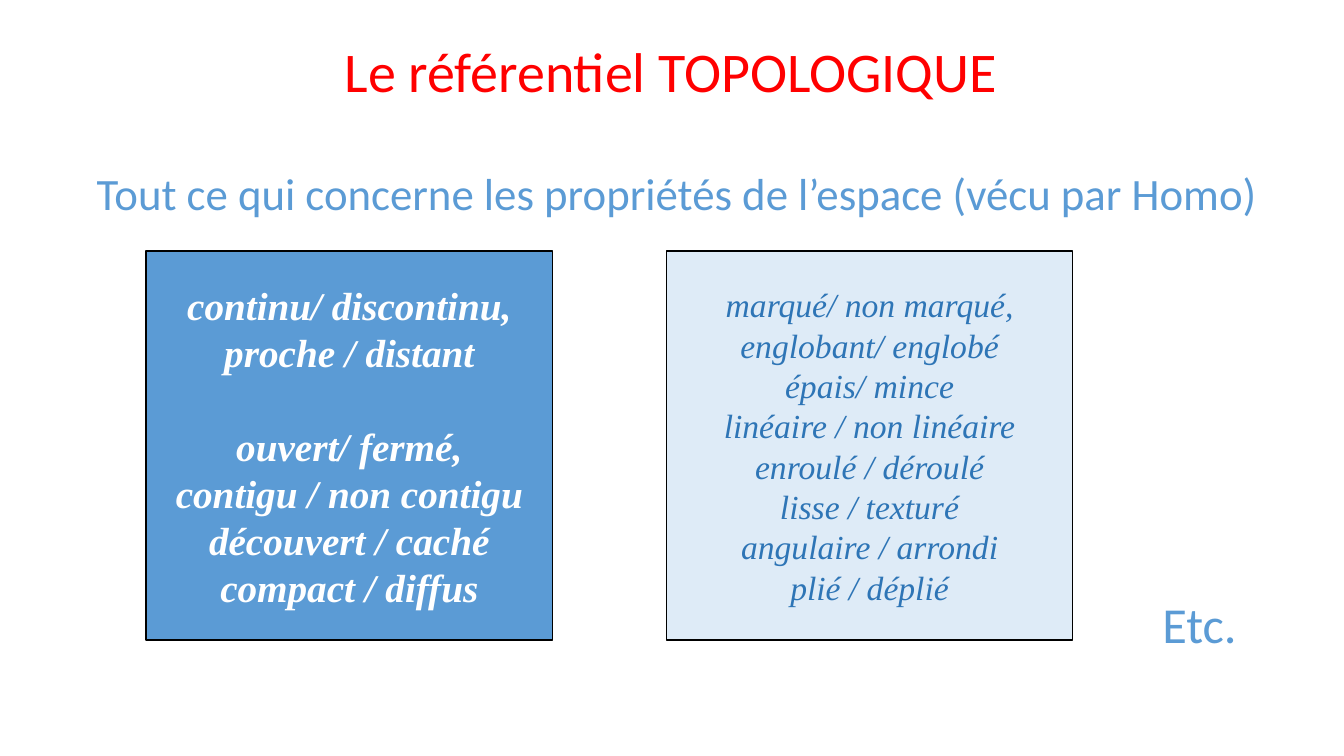
from pptx import Presentation
from pptx.dml.color import RGBColor
from pptx.enum.shapes import MSO_SHAPE as Shape
from pptx.enum.text import MSO_ANCHOR as Anchor, MSO_AUTO_SIZE as AutoSize, PP_ALIGN as Align
from pptx.util import Inches, Pt

RED = RGBColor(0xFF, 0x00, 0x00)
BLUE = RGBColor(0x5B, 0x9B, 0xD5)
DARK_BLUE = RGBColor(0x2E, 0x75, 0xB6)
PALE_BLUE = RGBColor(0xDE, 0xEB, 0xF7)
WHITE = RGBColor(0xFF, 0xFF, 0xFF)
BLACK = RGBColor(0x00, 0x00, 0x00)

PANEL_TOP, PANEL_WIDTH, PANEL_HEIGHT = 2.49, 4.03, 3.86
LINE_RATIO = 1.2

MAIN_GROUPS = [
    ["continu/ discontinu,", "proche / distant"],
    ["ouvert/ fermé,", "contigu / non contigu", "découvert / caché", "compact / diffus"],
]
OTHER_GROUPS = [
    ["marqué/ non marqué,", "englobant/ englobé", "épais/ mince",
     "linéaire / non linéaire", "enroulé / déroulé", "lisse / texturé",
     "angulaire / arrondi", "plié / déplié"],
]


def add_span(para, text, font_name, size, color, bold=False, italic=False):
    span = para.add_run()
    span.text = text
    font = span.font
    font.name, font.size = font_name, Pt(size)
    font.bold, font.italic = bold, italic
    font.color.rgb = color


def fill_label(box, text, size, color):
    frame = box.text_frame
    frame.word_wrap = False
    frame.auto_size = AutoSize.SHAPE_TO_FIT_TEXT
    para = frame.paragraphs[0]
    para.alignment = Align.LEFT
    add_span(para, text, "Calibri", size, color)


def set_title(page, text, left, top, width, height):
    title = page.shapes.title
    title.left, title.top = Inches(left), Inches(top)
    title.width, title.height = Inches(width), Inches(height)
    fill_label(title, text, 40, RED)


def add_label(page, text, left, top, width, height, size):
    box = page.shapes.add_textbox(Inches(left), Inches(top), Inches(width), Inches(height))
    fill_label(box, text, size, BLUE)


def add_panel(page, left, groups, fill, color, size, bold):
    panel = page.shapes.add_shape(Shape.RECTANGLE, Inches(left), Inches(PANEL_TOP),
                                  Inches(PANEL_WIDTH), Inches(PANEL_HEIGHT))
    panel.shadow.inherit = False
    panel.fill.solid()
    panel.fill.fore_color.rgb = fill
    panel.line.color.rgb = BLACK
    panel.line.width = Pt(1)
    frame = panel.text_frame
    frame.word_wrap = False
    frame.vertical_anchor = Anchor.MIDDLE
    spacing = Pt(size * LINE_RATIO)
    para = None
    for group in groups:
        for index, text in enumerate(group):
            is_first = para is None
            para = frame.paragraphs[0] if is_first else frame.add_paragraph()
            para.alignment = Align.CENTER
            para.line_spacing = spacing
            if index == 0 and not is_first:
                para.space_before = spacing
            add_span(para, text, "Times New Roman", size, color, bold, True)


def main():
    deck = Presentation()
    deck.slide_width, deck.slide_height = Inches(13.33), Inches(7.5)
    page = deck.slides.add_slide(deck.slide_layouts.get_by_name("Title Only"))
    set_title(page, "Le référentiel TOPOLOGIQUE", 3.32, 0.31, 6.74, 0.77)
    add_label(page, "Tout ce qui concerne les propriétés de l’espace (vécu par Homo)",
              0.86, 1.59, 11.83, 0.64, 32)
    add_panel(page, 1.45, MAIN_GROUPS, BLUE, WHITE, 28, True)
    add_panel(page, 6.61, OTHER_GROUPS, PALE_BLUE, DARK_BLUE, 24, False)
    add_label(page, "Etc.", 11.43, 5.83, 0.95, 0.71, 36)
    deck.save("out.pptx")


if __name__ == "__main__":
    main()
